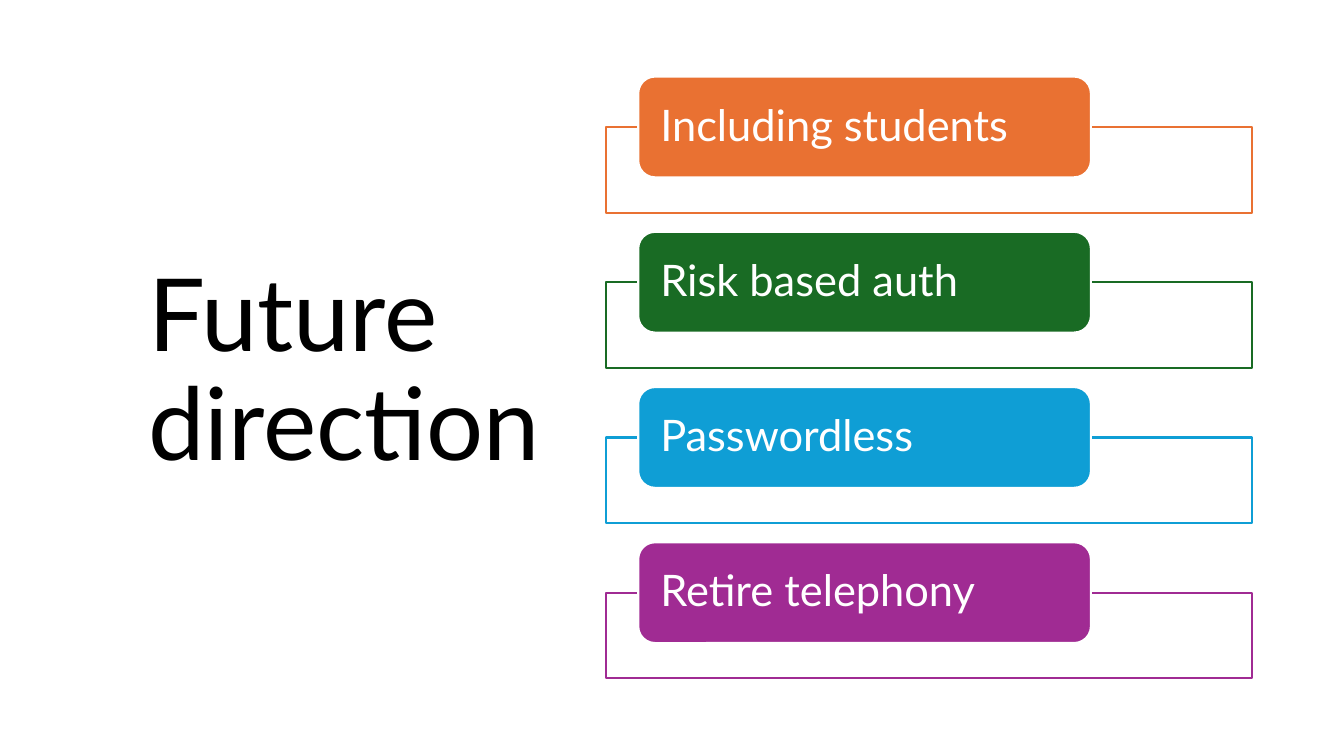
import pptx
import pptx.dml.color
import pptx.enum.shapes
import pptx.enum.text
import pptx.oxml
import pptx.oxml.ns
import pptx.util

Inches = pptx.util.Inches
Pt = pptx.util.Pt
Shapes = pptx.enum.shapes.MSO_SHAPE

COLORS = {
    "white": "FFFFFF",
    "black": "000000",
    "orange": "E97132",
    "green": "196B24",
    "blue": "0F9ED5",
    "purple": "A02B93",
}
DIRECTIONS = [
    ("Including students", "orange"),
    ("Risk based auth", "green"),
    ("Passwordless", "blue"),
    ("Retire telephony", "purple"),
]
FIRST_TOP = 0.76
ROW_STEP = 1.54


class SlideBuilder:
    """Draws styled elements on the current slide."""

    def __init__(self, deck, font="Lato"):
        self.font = font
        self.page = deck.slides.add_slide(deck.slide_layouts[6])

    def color(self, name):
        return pptx.dml.color.RGBColor.from_string(COLORS[name])

    def add_text(self, box, text, size, color, side=0.1):
        frame = box.text_frame
        frame_format = {
            "word_wrap": True,
            "vertical_anchor": pptx.enum.text.MSO_ANCHOR.MIDDLE,
            "margin_left": Inches(side),
            "margin_right": Inches(side),
            "margin_top": 0,
            "margin_bottom": 0,
        }
        para = frame.paragraphs[0]
        para_format = {
            "alignment": pptx.enum.text.PP_ALIGN.LEFT,
            "line_spacing": 0.9,
        }
        span = para.add_run()
        span.text = text
        span_format = {"name": self.font, "size": Pt(size)}
        for target, values in (
            (frame, frame_format),
            (para, para_format),
            (span.font, span_format),
        ):
            for key, value in values.items():
                setattr(target, key, value)
        span.font.color.rgb = self.color(color)

    def title(self, text, left, top, width, height):
        box = self.page.shapes.add_textbox(
            Inches(left), Inches(top), Inches(width), Inches(height))
        self.add_text(box, text, 72, "black")

    def panel(self, kind, left, top, width, height, fill, line, alpha=100):
        box = self.page.shapes.add_shape(
            kind, Inches(left), Inches(top), Inches(width), Inches(height))
        box.shadow.inherit = False
        box.fill.solid()
        box.fill.fore_color.rgb = self.color(fill)
        box.line.color.rgb = self.color(line)
        box.line.width = Pt(1.5)
        if alpha < 100:
            tint = box.element.spPr.find(
                "a:solidFill/a:srgbClr", pptx.oxml.ns._nsmap)
            opacity = pptx.oxml.parse_xml(
                f'<a:alpha {pptx.oxml.ns.nsdecls("a")} val="{alpha * 1000}"/>')
            tint.append(opacity)
        return box

    def direction(self, text, color, top):
        self.panel(Shapes.RECTANGLE, 6.01, top + 0.5, 6.41, 0.85,
                   "white", color, alpha=90)
        label = self.panel(Shapes.ROUNDED_RECTANGLE, 6.33, top, 4.49, 1,
                           color, "white")
        self.add_text(label, text, 31, "white", side=0.17)


def main():
    deck = pptx.Presentation()
    deck.slide_width = Inches(13.33)
    deck.slide_height = Inches(7.5)
    builder = SlideBuilder(deck)
    builder.title("Future direction", 1.37, 0.65, 4.31, 6.11)
    for row, (text, color) in enumerate(DIRECTIONS):
        builder.direction(text, color, FIRST_TOP + row * ROW_STEP)
    deck.save("out.pptx")


if __name__ == "__main__":
    main()
